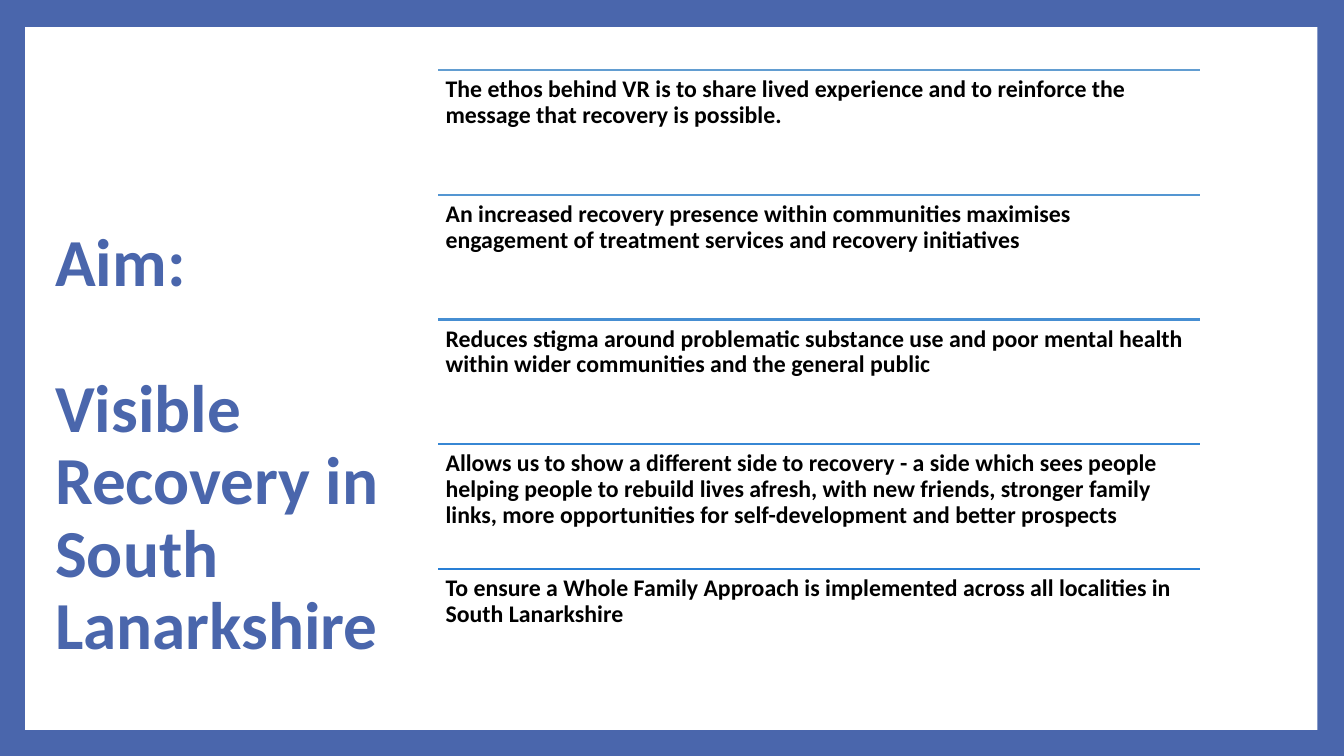
import pptx
import pptx.util
import pptx.dml.color
import pptx.enum.shapes
import pptx.enum.text
import pptx.oxml.ns
from lxml import etree

Pt = pptx.util.Pt
RGBColor = pptx.dml.color.RGBColor

# Content
TITLE = ["Aim:", "Visible Recovery in South Lanarkshire"]
AIMS = [
    ("The ethos behind VR is to share lived experience and to reinforce the "
     "message that recovery is possible.", RGBColor(0x62, 0x9D, 0xD1)),
    ("An increased recovery presence within communities maximises "
     "engagement of treatment services and recovery initiatives",
     RGBColor(0x54, 0x96, 0xD2)),
    ("Reduces stigma around problematic substance use and poor mental "
     "health within wider communities and the general public",
     RGBColor(0x46, 0x8E, 0xD2)),
    ("Allows us to show a different side to recovery - a side which sees "
     "people helping people to rebuild lives afresh, with new friends, "
     "stronger family links, more opportunities for self-development and "
     "better prospects", RGBColor(0x37, 0x87, 0xD4)),
    ("To ensure a Whole Family Approach is implemented across all localities "
     "in South Lanarkshire", RGBColor(0x29, 0x7F, 0xD5)),
]

# Style and layout, in points
BLUE = RGBColor(0x4A, 0x66, 0xAC)
WHITE = RGBColor(0xFF, 0xFF, 0xFF)
BLACK = RGBColor(0, 0, 0)
FONT = "Calibri"
AIM_LEFT, AIM_TOP, AIM_WIDTH, AIM_HEIGHT = 313.2, 50.2, 544.3, 89
AIM_INSET = 5.1
TITLE_GAP = 52


def add_text(page, area, paragraphs, size, color, inset_x, inset_y, anchor):
    box = page.shapes.add_textbox(*(Pt(length) for length in area))
    frame = box.text_frame
    frame.text = "\n".join(paragraphs)
    frame.word_wrap = True
    frame.vertical_anchor = anchor
    frame.margin_left = frame.margin_right = Pt(inset_x)
    frame.margin_top = frame.margin_bottom = Pt(inset_y)
    for para in frame.paragraphs:
        para.line_spacing = 0.9
        for span in para.runs:
            span.font.name = FONT
            span.font.size = Pt(size)
            span.font.bold = True
            span.font.color.rgb = color
    return box


def add_rule(page, left, top, width, color):
    rule = page.shapes.add_connector(
        pptx.enum.shapes.MSO_CONNECTOR.STRAIGHT,
        Pt(left), Pt(top), Pt(left + width), Pt(top))
    rule.line.color.rgb = color
    rule.line.width = Pt(1.5)
    properties = rule._element.spPr
    etree.SubElement(properties, pptx.oxml.ns.qn("a:effectLst"))


deck = pptx.Presentation()
deck.slide_width, deck.slide_height = Pt(960), Pt(540)
page = deck.slides.add_slide(deck.slide_layouts[6])

# Blue frame around a white panel
page.background.fill.solid()
page.background.fill.fore_color.rgb = BLUE
panel = page.shapes.add_shape(
    pptx.enum.shapes.MSO_SHAPE.RECTANGLE, Pt(18), Pt(19.4), Pt(923), Pt(502))
panel.shadow.inherit = False
panel.fill.solid()
panel.fill.fore_color.rgb = WHITE
panel.line.fill.background()

# Title
title = add_text(page, (32.4, 152, 284.4, 334), TITLE, 48, BLUE, 7.2, 3.6,
                 pptx.enum.text.MSO_ANCHOR.MIDDLE)
title.text_frame.paragraphs[0].space_after = Pt(TITLE_GAP)

# Aims, each under its own rule
for index, (aim, rule_color) in enumerate(AIMS):
    top = AIM_TOP + index * AIM_HEIGHT
    add_rule(page, AIM_LEFT, top, AIM_WIDTH, rule_color)
    add_text(page, (AIM_LEFT, top, AIM_WIDTH, AIM_HEIGHT), [aim], 17, BLACK,
             AIM_INSET, AIM_INSET, pptx.enum.text.MSO_ANCHOR.TOP)

deck.save("out.pptx")
